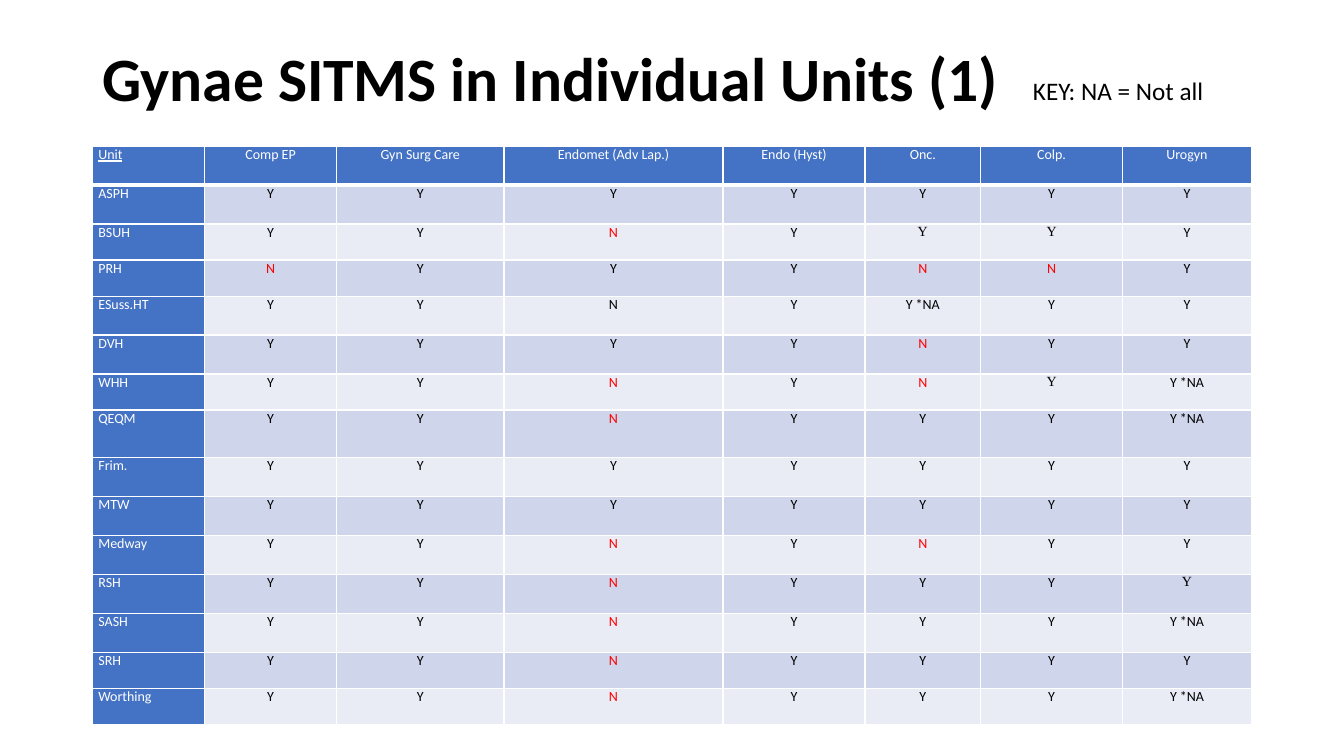
"""Build the slide of gynaecology SITMs offered in each unit."""
from lxml.etree import SubElement
from pptx import Presentation
from pptx.dml.color import RGBColor
from pptx.enum.text import MSO_ANCHOR, PP_ALIGN
from pptx.oxml.ns import qn
from pptx.util import Pt

TITLE = "Gynae SITMS in Individual Units (1)"
KEY = "KEY: NA = Not all"
HEADINGS = ("Unit", "Comp EP", "Gyn Surg Care", "Endomet (Adv Lap.)",
            "Endo (Hyst)", "Onc.", "Colp.", "Urogyn")
UNITS = [
    ("ASPH", "Y", "Y", "Y", "Y", "Y", "Y", "Y"),
    ("BSUH", "Y", "Y", "N", "Y", "Y", "Y", "Y"),
    ("PRH", "N", "Y", "Y", "Y", "N", "N", "Y"),
    ("ESuss.HT", "Y", "Y", "N", "Y", "Y *NA", "Y", "Y"),
    ("DVH", "Y", "Y", "Y", "Y", "N", "Y", "Y"),
    ("WHH", "Y", "Y", "N", "Y", "N", "Y", "Y *NA"),
    ("QEQM", "Y", "Y", "N", "Y", "Y", "Y", "Y *NA"),
    ("Frim.", "Y", "Y", "Y", "Y", "Y", "Y", "Y"),
    ("MTW", "Y", "Y", "Y", "Y", "Y", "Y", "Y"),
    ("Medway", "Y", "Y", "N", "Y", "N", "Y", "Y"),
    ("RSH", "Y", "Y", "N", "Y", "Y", "Y", "Y"),
    ("SASH", "Y", "Y", "N", "Y", "Y", "Y", "Y *NA"),
    ("SRH", "Y", "Y", "N", "Y", "Y", "Y", "Y"),
    ("Worthing", "Y", "Y", "N", "Y", "Y", "Y", "Y *NA"),
]
SERIF_CELLS = {("BSUH", "Onc."), ("BSUH", "Colp."), ("WHH", "Colp."), ("RSH", "Urogyn")}
BLACK_N_CELLS = {("ESuss.HT", "Endomet (Adv Lap.)")}

THEME = {
    "font": "Calibri", "serif": "Times New Roman",
    "title": 44, "key": 18, "cell": 10,
    "ink": "000000", "light": "FFFFFF", "no": "FF0000",
    "header": "4472C4", "bands": ("CFD5EA", "E9EBF5"),
}
LEFT, WIDTH, TABLE_TOP = 66, 828, 104.4
COLUMN_WIDTHS = (80, 94.5, 119.5, 156.5, 101.5, 82.5, 101.5, 92)
ROW_HEIGHT, SHORT_ROW, TALL_ROW = 27.8, 25.8, 34
ROW_HEIGHTS = {"BSUH": SHORT_ROW, "PRH": SHORT_ROW, "WHH": SHORT_ROW,
               "QEQM": TALL_ROW, "SRH": SHORT_ROW, "Worthing": SHORT_ROW}
THIN, THICK = 1, 3


def write_text(frame, text, *, size, color=THEME["ink"], font=THEME["font"],
               bold=False, underline=False, align=PP_ALIGN.LEFT, spacing=None):
    frame.word_wrap = True
    paragraph = frame.paragraphs[0]
    paragraph.alignment = align
    paragraph.line_spacing = spacing
    run = paragraph.add_run()
    run.text = text
    run.font.size = Pt(size)
    run.font.name = font
    run.font.bold = bold
    run.font.underline = underline
    run.font.color.rgb = RGBColor.from_string(color)


def add_label(slide, text, left, top, width, height, anchor=MSO_ANCHOR.TOP, **text_format):
    box = slide.shapes.add_textbox(Pt(left), Pt(top), Pt(width), Pt(height))
    box.text_frame.vertical_anchor = anchor
    write_text(box.text_frame, text, **text_format)


def style_cell(cell, fill, bottom_border):
    cell.margin_left = cell.margin_right = Pt(4.3)
    cell.margin_top = cell.margin_bottom = Pt(0)
    properties = cell._tc.get_or_add_tcPr()
    borders = {"a:lnL": THIN, "a:lnR": THIN, "a:lnT": THIN, "a:lnB": bottom_border}
    for tag, width in borders.items():
        line = SubElement(properties, qn(tag), w=str(Pt(width)))
        solid = SubElement(line, qn("a:solidFill"))
        SubElement(solid, qn("a:srgbClr"), val=THEME["light"])
    cell.fill.solid()
    cell.fill.fore_color.rgb = RGBColor.from_string(fill)


def cell_color(text, place, is_header):
    if is_header:
        return THEME["light"]
    return THEME["no"] if text == "N" and place not in BLACK_N_CELLS else THEME["ink"]


def add_unit_table(slide):
    rows = [HEADINGS, *UNITS]
    heights = [ROW_HEIGHTS.get(row[0], ROW_HEIGHT) for row in rows]
    table = slide.shapes.add_table(len(rows), len(HEADINGS), Pt(LEFT), Pt(TABLE_TOP),
                                   Pt(WIDTH), Pt(sum(heights))).table
    table.horz_banding = False
    for column, width in zip(table.columns, COLUMN_WIDTHS):
        column.width = Pt(width)
    for row_index, (row, height) in enumerate(zip(rows, heights)):
        table.rows[row_index].height = Pt(height)
        for column_index, text in enumerate(row):
            cell = table.cell(row_index, column_index)
            place = (row[0], HEADINGS[column_index])
            is_header = row_index == 0 or column_index == 0
            band = THEME["bands"][(row_index - 1) % 2]
            style_cell(cell, THEME["header"] if is_header else band,
                       THICK if row_index == 0 else THIN)
            write_text(cell.text_frame, text, size=THEME["cell"],
                       color=cell_color(text, place, is_header),
                       font=THEME["serif"] if place in SERIF_CELLS else THEME["font"],
                       underline=row_index == column_index == 0,
                       align=PP_ALIGN.CENTER if column_index else PP_ALIGN.LEFT)


def main():
    presentation = Presentation()
    presentation.slide_width, presentation.slide_height = Pt(960), Pt(540)
    slide = presentation.slides.add_slide(presentation.slide_layouts[6])
    add_label(slide, TITLE, LEFT, 28.8, WIDTH, 59, anchor=MSO_ANCHOR.MIDDLE,
              size=THEME["title"], bold=True, spacing=0.9)
    add_unit_table(slide)
    add_label(slide, KEY, 730.8, 50.4, 163.4, 29, size=THEME["key"])
    presentation.save("out.pptx")


if __name__ == "__main__":
    main()
